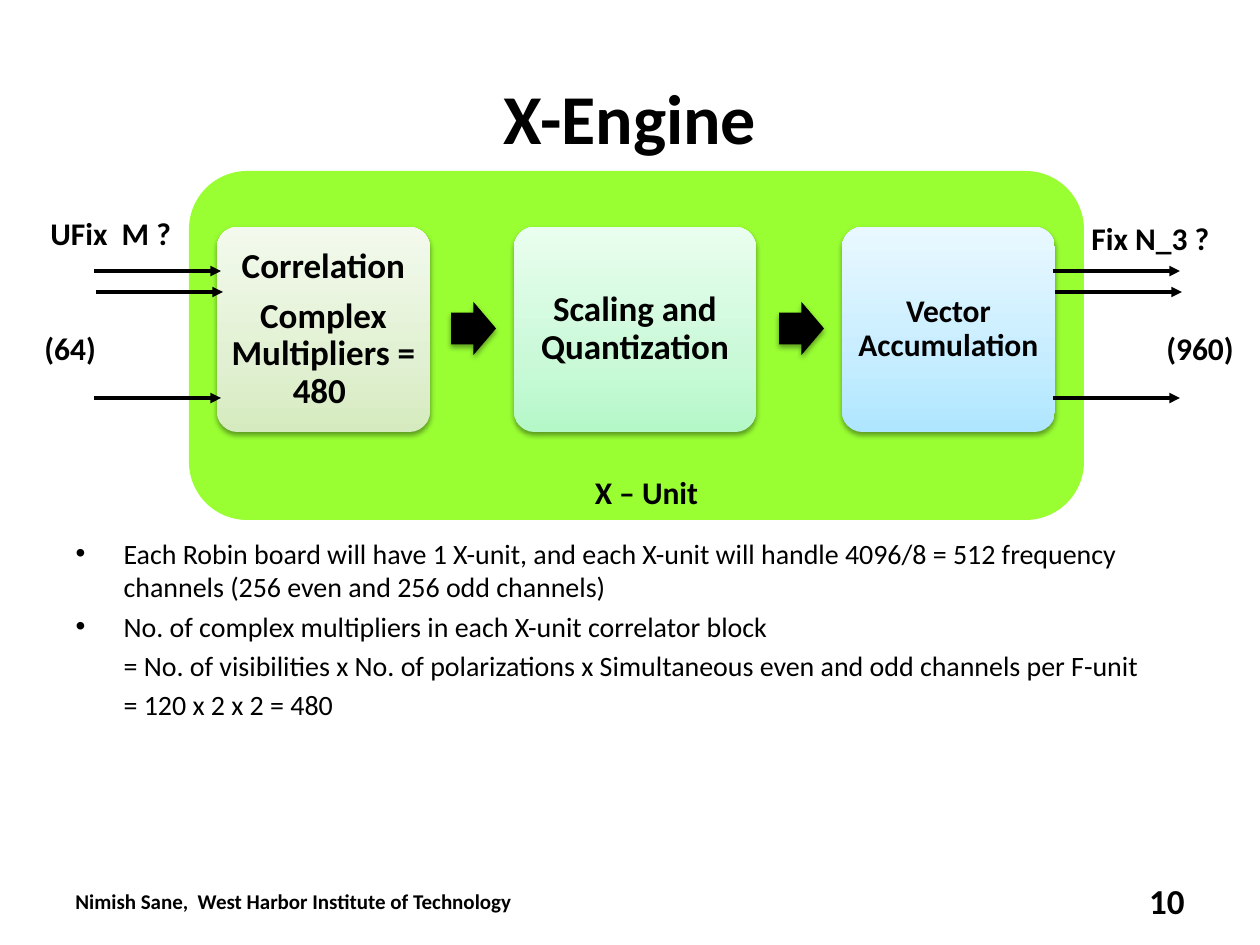
"""Build the X-Engine block diagram slide."""
import copy
import dataclasses

import lxml.etree
import pptx
import pptx.dml.color
import pptx.enum.shapes
import pptx.enum.text
import pptx.oxml.ns
import pptx.util


@dataclasses.dataclass(frozen=True)
class Theme:
    font: str = "Calibri"
    ink: str = "000000"
    paper: str = "FFFFFF"
    unit: str = "99FF33"
    correlation: tuple = ("D5EBBF", "E1F0D2", "F3FAED")
    scaling: tuple = ("B4F8C8", "CAF9D8", "EAFEEF")
    accumulation: tuple = ("AEE6FF", "C6EDFF", "E9F8FF")
    title: int = 40
    block: int = 20
    label: int = 18
    body: int = 16
    footer: int = 12


theme = Theme()
PX = pptx.util.Inches(1) / 126
rgb = pptx.dml.color.RGBColor.from_string
qn = pptx.oxml.ns.qn
shapes = pptx.enum.shapes.MSO_SHAPE
align = pptx.enum.text.PP_ALIGN
anchors = pptx.enum.text.MSO_ANCHOR


def px(*lengths):
    return [round(length * PX) for length in lengths]


def write(frame, texts, size=theme.label, bold=True, alignment=align.LEFT,
          anchor=anchors.TOP, inset=None, line_spacing=None, before=0, after=0):
    frame.word_wrap = True
    frame.auto_size = pptx.enum.text.MSO_AUTO_SIZE.NONE
    frame.vertical_anchor = anchor
    if inset is not None:
        frame.margin_left, frame.margin_top, frame.margin_right, frame.margin_bottom = px(*[inset] * 4)
    for index, text in enumerate(texts):
        para = frame.paragraphs[0] if index == 0 else frame.add_paragraph()
        para.alignment = alignment
        para.line_spacing = line_spacing
        para.space_before = pptx.util.Pt(before)
        para.space_after = pptx.util.Pt(after)
        span = para.add_run()
        span.text = text
        span.font.name = theme.font
        span.font.size = pptx.util.Pt(size)
        span.font.bold = bold
        span.font.color.rgb = rgb(theme.ink)


deck = pptx.Presentation()
deck.slide_width, deck.slide_height = px(1260, 945)
page = deck.slides.add_slide(deck.slide_layouts[1])

title = page.shapes.title
title.left, title.top, title.width, title.height = px(63, 38, 1134, 158)
title.fill.solid()
title.fill.fore_color.rgb = rgb(theme.paper)
title.line.color.rgb = rgb(theme.paper)
title.line.width = pptx.util.Pt(0.75)
write(title.text_frame, ["X-Engine"], size=theme.title, alignment=align.CENTER, anchor=anchors.MIDDLE)

body = page.placeholders[1]
body.left, body.top, body.width, body.height = px(63, 530, 1134, 314)
write(body.text_frame, [
    "Each Robin board will have 1 X-unit, and each X-unit will handle 4096/8 = 512 frequency "
    "channels (256 even and 256 odd channels)",
    "No. of complex multipliers in each X-unit correlator block",
    "= No. of visibilities x No. of polarizations x Simultaneous even and odd channels per F-unit",
    "= 120 x 2 x 2 = 480",
], size=theme.body, bold=False, before=3.2)
hanging = px(48)[0]
for para in body.text_frame.paragraphs:
    continued = para.text.startswith("=")
    properties = para._p.get_or_add_pPr()
    properties.set("marL", str(hanging))
    properties.set("indent", "0" if continued else str(-hanging))
    if continued:
        lxml.etree.SubElement(properties, qn("a:buNone"))

unit = page.shapes.add_shape(shapes.ROUNDED_RECTANGLE, *px(189, 171, 895, 349))
unit.shadow.inherit = False
unit.fill.solid()
unit.fill.fore_color.rgb = rgb(theme.unit)
unit.line.fill.background()

blocks = [
    (217, 213, theme.correlation, ["Correlation", "Complex Multipliers = 480 "], theme.block, 4),
    (514, 242, theme.scaling, ["Scaling and Quantization"], theme.block, 4),
    (842, 213, theme.accumulation, ["Vector Accumulation"], theme.label, 3),
]
stages = []
for left, width, colors, texts, size, inset in blocks:
    block = page.shapes.add_shape(shapes.ROUNDED_RECTANGLE, *px(left, 227, width, 205))
    block.adjustments[0] = 0.1
    block.fill.gradient()
    block.fill.gradient_angle = 90
    stops = block.element.spPr.find(".//" + qn("a:gsLst"))
    stops.insert(1, copy.deepcopy(stops[0]))
    for stop, color, position in zip(block.fill.gradient_stops, colors, (0, 0.35, 1)):
        stop.color.rgb = rgb(color)
        stop.position = position
    write(block.text_frame, texts, size=size, alignment=align.CENTER, anchor=anchors.MIDDLE,
          inset=inset, line_spacing=0.9, after=size * 0.35)
    stages.append(block)

for left in (451, 779):
    arrow = page.shapes.add_shape(shapes.RIGHT_ARROW, *px(left, 302, 45, 53))
    arrow.adjustments[0] = 0.6
    arrow.adjustments[1] = 0.5
    arrow.fill.solid()
    arrow.fill.fore_color.rgb = rgb(theme.ink)
    stages.append(arrow)

for stage in stages:
    stage.line.fill.background()
    stage.shadow.inherit = False
    effects = stage.element.spPr.find(qn("a:effectLst"))
    shadow = lxml.etree.SubElement(effects, qn("a:outerShdw"), blurRad="40000", dist="20000",
                                   dir="5400000", rotWithShape="0")
    shade = lxml.etree.SubElement(shadow, qn("a:srgbClr"), val=theme.ink)
    lxml.etree.SubElement(shade, qn("a:alpha"), val="38000")

for start in (94, 1053):
    for shift, y in ((0, 271), (2, 292), (0, 398)):
        signal = page.shapes.add_connector(
            pptx.enum.shapes.MSO_CONNECTOR.STRAIGHT, *px(start + shift, y, start + shift + 127, y))
        signal.line.color.rgb = rgb(theme.ink)
        signal.line.width = pptx.util.Pt(2)
        lxml.etree.SubElement(signal.line._get_or_add_ln(), qn("a:tailEnd"), type="triangle")
        lxml.etree.SubElement(signal.element.spPr, qn("a:effectLst"))

labels = [
    ("X – Unit ", (478, 467, 344, 50), {"alignment": align.CENTER}),
    ("UFix  M ?", (38, 208, 154, 50), {}),
    ("Fix N_3 ?", (1079, 213, 160, 50), {}),
    ("(64)", (32, 323, 84, 50), {}),
    ("(960)", (1154, 323, 101, 50), {}),
    ("Nimish Sane,  West Harbor Institute of Technology", (63, 876, 478, 50),
     {"size": theme.footer, "anchor": anchors.MIDDLE}),
    ("10", (903, 876, 294, 50),
     {"size": theme.block, "alignment": align.RIGHT, "anchor": anchors.MIDDLE}),
]
for text, area, style in labels:
    box = page.shapes.add_textbox(*px(*area))
    write(box.text_frame, [text], **style)

deck.save("out.pptx")
